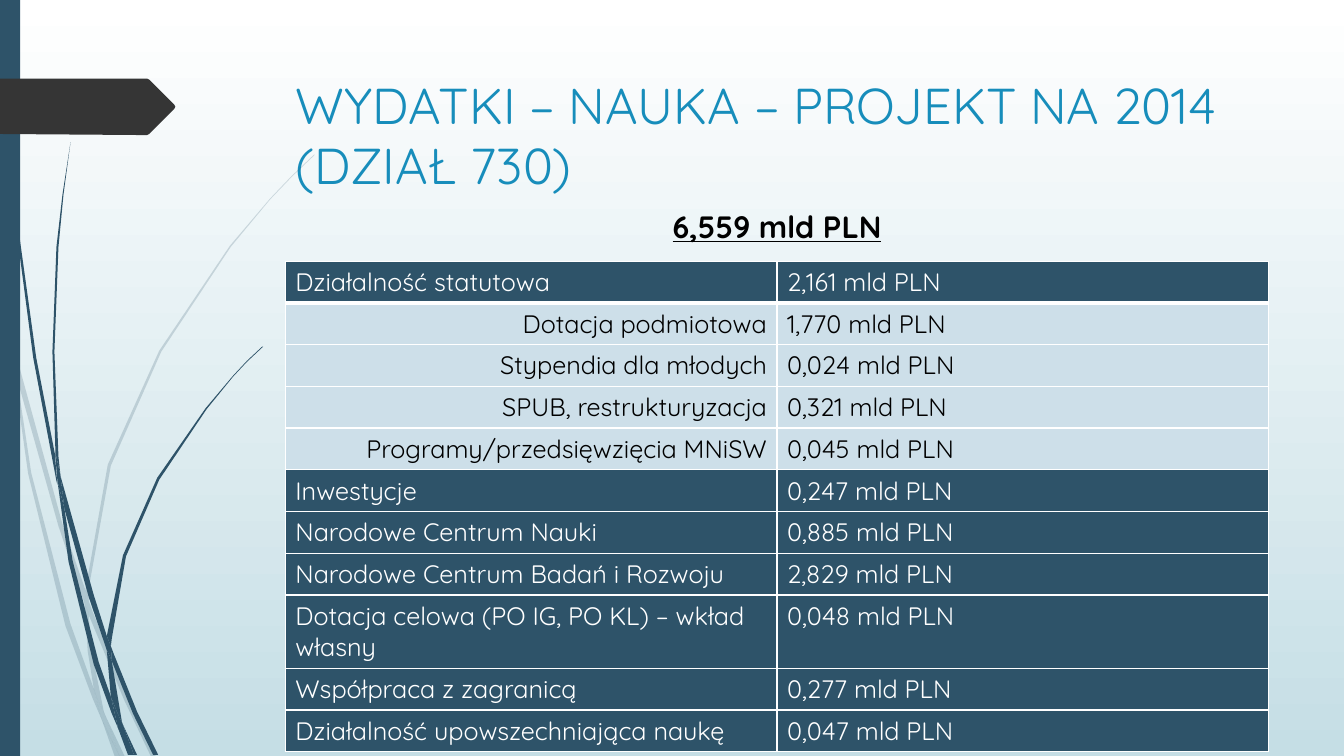
import lxml.etree
import pptx
import pptx.dml.color
import pptx.enum.text
import pptx.enum.shapes
import pptx.oxml.ns
import pptx.util

Pt = pptx.util.Pt
FONT = "Quicksand"
COLORS = {
    "navy": "2E5369",
    "pale": "CDDFE9",
    "title": "178DBB",
    "tag": "353535",
    "white": "FFFFFF",
    "black": "000000",
    "sky": "C5DEE5",
}

# Outlines are lists of x, y pairs on a grid of 0.72 points
GRID = 0.72
PALE_STEMS = [
    [11, 350, 9, 322, 0, 282, 0, 299, 10, 344],
    [58, 522, 84, 599, 85, 586, 62, 520, 14, 345, 17, 376],
    [92, 607, 88, 596, 88, 610, 123, 694, 150, 751, 155, 751, 127, 692],
    [119, 751, 124, 751, 105, 711],
    [93, 683, 70, 619, 31, 469, 17, 376, 11, 350, 28, 470, 65, 621, 92, 693,
     101, 714, 99, 707],
    [84, 599, 87, 646, 93, 683, 96, 692, 105, 711, 103, 706, 91, 646, 88, 610, 88, 608],
    [88, 584, 110, 462, 160, 349, 229, 245, 268, 198, 290, 175, 312, 154, 312, 153,
     289, 175, 268, 197, 228, 244, 158, 348, 107, 461, 85, 584, 85, 586, 88, 596],
    [101, 714, 114, 751, 119, 751],
    [88, 608, 88, 610, 88, 596, 85, 586, 84, 599],
    [96, 692, 93, 683, 99, 707, 101, 714, 119, 751, 105, 711],
]
DARK_STEMS = [
    [7, 110, 17, 233, 33, 355, 56, 477, 57, 481, 55, 457, 55, 453, 36, 355, 19, 232,
     8, 109, 5, 48, 4, 0, 3, 0, 4, 48],
    [88, 592, 106, 645, 106, 633, 106, 631, 93, 590, 60, 472, 64, 505],
    [113, 649, 110, 641, 111, 656, 132, 708, 152, 749, 157, 749, 136, 706],
    [110, 691, 98, 657, 72, 556, 64, 505, 57, 477, 68, 557, 93, 659, 111, 708,
     117, 722, 116, 717],
    [60, 472, 58, 453, 54, 349, 58, 245, 63, 193, 70, 141, 62, 193, 56, 245, 52, 349,
     55, 449],
    [133, 749, 136, 749, 122, 719],
    [57, 477, 64, 505, 60, 472, 55, 449, 55, 453],
    [111, 633, 125, 552, 158, 476, 205, 406, 231, 374, 245, 359, 261, 344, 260, 344,
     245, 358, 231, 373, 204, 405, 156, 474, 122, 551, 106, 631, 110, 641],
    [117, 722, 127, 749, 131, 749],
    [106, 645, 110, 691, 116, 706, 122, 719, 121, 716, 111, 656, 109, 651],
    [106, 645, 109, 651, 111, 656, 110, 641, 106, 631, 106, 633],
    [116, 706, 110, 691, 116, 717, 117, 722, 130, 749, 133, 749, 122, 719],
]
PAGE_TAG = [173, 108, 148, 133, 146, 134, 136, 134, 0, 133, 0, 78, 136, 78, 146, 78,
            148, 79, 173, 104, 174, 106]

# Label, amount, whether the row details the heading above it
EXPENSES = [
    ("Działalność statutowa", "2,161 mld PLN", False),
    ("Dotacja podmiotowa", "1,770 mld PLN", True),
    ("Stypendia dla młodych", "0,024 mld PLN", True),
    ("SPUB, restrukturyzacja", "0,321 mld PLN", True),
    ("Programy/przedsięwzięcia MNiSW", "0,045 mld PLN", True),
    ("Inwestycje", "0,247 mld PLN", False),
    ("Narodowe Centrum Nauki", "0,885 mld PLN", False),
    ("Narodowe Centrum Badań i Rozwoju", "2,829 mld PLN", False),
    ("Dotacja celowa (PO IG, PO KL) – wkład własny", "0,048 mld PLN", False),
    ("Współpraca z zagranicą", "0,277 mld PLN", False),
    ("Działalność upowszechniająca naukę", "0,047 mld PLN", False),
]


def rgb(color):
    return pptx.dml.color.RGBColor.from_string(COLORS[color])


def style_text(paragraph, size, color, bold=False, underline=False, align="LEFT"):
    font = paragraph.font
    font.name, font.size, font.bold, font.underline = FONT, Pt(size), bold, underline
    font.color.rgb = rgb(color)
    paragraph.alignment = pptx.enum.text.PP_ALIGN[align]


def paint(shape, color, opacity=100):
    shape.shadow.inherit = False
    shape.fill.solid()
    shape.fill.fore_color.rgb = rgb(color)
    shape.line.fill.background()
    if opacity < 100:
        tint = shape.fill._xPr.find(".//" + pptx.oxml.ns.qn("a:srgbClr"))
        alpha = lxml.etree.SubElement(tint, pptx.oxml.ns.qn("a:alpha"))
        alpha.set("val", str(opacity * 1000))


def add_outline(shapes, outline, color, opacity=100):
    lengths = [Pt(value * GRID) for value in outline]
    start, *rest = zip(lengths[::2], lengths[1::2])
    builder = shapes.build_freeform(*start)
    builder.add_line_segments(rest, close=True)
    paint(builder.convert_to_shape(), color, opacity)


def add_stems(slide, outlines, opacity):
    stems = slide.shapes.add_group_shape()
    for outline in outlines:
        add_outline(stems.shapes, outline, "navy", opacity)


def add_side_bar(slide):
    bar = slide.shapes.add_shape(
        pptx.enum.shapes.MSO_SHAPE.RECTANGLE, 0, 0, Pt(14.4), Pt(540))
    paint(bar, "navy")


def add_title(slide, text):
    title = slide.shapes.title
    title.left, title.top, title.width, title.height = Pt(204.1), Pt(49), Pt(702), Pt(101)
    frame = title.text_frame
    frame.text = text
    frame.word_wrap = True
    frame.auto_size = pptx.enum.text.MSO_AUTO_SIZE.NONE
    frame.vertical_anchor = pptx.enum.text.MSO_ANCHOR.TOP
    style_text(frame.paragraphs[0], 36, "title")


def add_total(slide, text):
    total = slide.shapes.add_textbox(Pt(472), Pt(144.7), Pt(166), Pt(34))
    total.text_frame.word_wrap = True
    total.text_frame.text = text
    style_text(total.text_frame.paragraphs[0], 22, "black", True, True, "CENTER")


def add_borders(cell, bottom_width):
    properties = cell._tc.get_or_add_tcPr()
    for side, width in (("L", 1), ("R", 1), ("T", 1), ("B", bottom_width)):
        border = lxml.etree.SubElement(properties, pptx.oxml.ns.qn("a:ln" + side))
        border.set("w", str(Pt(width)))
        fill = lxml.etree.SubElement(border, pptx.oxml.ns.qn("a:solidFill"))
        tint = lxml.etree.SubElement(fill, pptx.oxml.ns.qn("a:srgbClr"))
        tint.set("val", COLORS["white"])


def add_expense_table(slide):
    row_height = 29.2
    table = slide.shapes.add_table(
        len(EXPENSES), 2, Pt(203.8), Pt(186.6), Pt(702.4), Pt(row_height * len(EXPENSES))).table
    table.horz_banding = False
    for r, (label, amount, detail) in enumerate(EXPENSES):
        table.rows[r].height = Pt(row_height)
        for cell, text in zip(table.rows[r].cells, (label, amount)):
            cell.text = text
            align = "RIGHT" if detail and text == label else "LEFT"
            style_text(cell.text_frame.paragraphs[0], 18,
                       "black" if detail else "white", align=align)
            add_borders(cell, 3 if r == 0 else 1)
            cell.fill.solid()
            cell.fill.fore_color.rgb = rgb("pale" if detail else "navy")


def set_background(slide):
    fill = slide.background.fill
    fill.gradient()
    fill.gradient_angle = 270
    for stop, color in zip(fill.gradient_stops, ("white", "sky")):
        stop.color.rgb = rgb(color)


def main():
    deck = pptx.Presentation()
    deck.slide_width, deck.slide_height = Pt(960), Pt(540)
    slide = deck.slides.add_slide(deck.slide_layouts[5])

    # Backdrop: stems, side bar and page tag
    set_background(slide)
    add_stems(slide, PALE_STEMS, 20)
    add_stems(slide, DARK_STEMS, 100)
    add_side_bar(slide)
    add_outline(slide.shapes, PAGE_TAG, "tag")

    # Content
    add_title(slide, "WYDATKI – NAUKA – PROJEKT NA 2014 (DZIAŁ 730)")
    add_expense_table(slide)
    add_total(slide, "6,559 mld PLN")

    deck.save("out.pptx")


if __name__ == "__main__":
    main()
